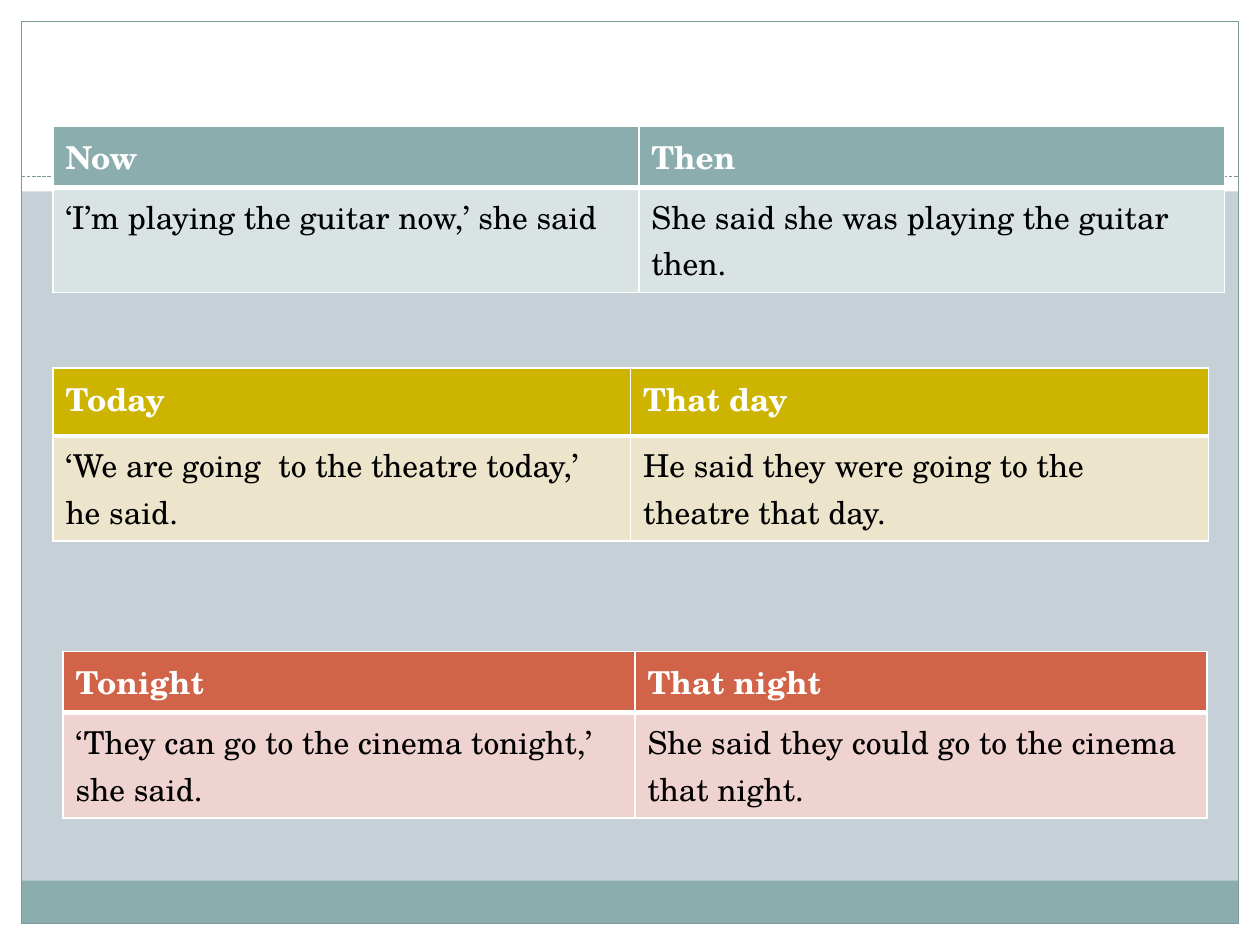
"""Build a slide of three tables on time words in reported speech."""
from dataclasses import dataclass

from lxml.etree import SubElement
from pptx import Presentation
from pptx.dml.color import RGBColor
from pptx.enum.dml import MSO_LINE
from pptx.enum.shapes import MSO_CONNECTOR, MSO_SHAPE
from pptx.oxml import parse_xml
from pptx.oxml.ns import nsdecls, qn
from pptx.util import Inches, Pt

WIDTH, HEIGHT = 10, 7.5
MARGIN = 0.17
HEADER_BOTTOM = 1.52
RULE_TOP = 1.4
FOOTER_HEIGHT = 0.34
FONT = "TeX Gyre Schola"
COLORS = {
    "page": "C5D1D7",
    "white": "FFFFFF",
    "black": "000000",
    "line": "7C999A",
    "teal": "8CADAE",
    "pale teal": "DAE3E3",
    "gold": "CCB400",
    "pale gold": "ECE5CC",
    "red": "D16349",
    "pale red": "EED3D0",
}


@dataclass(frozen=True)
class Band:
    left: float
    top: float
    width: float
    height: float
    fill: str | None
    line: str | None = None


@dataclass(frozen=True)
class SpeechTable:
    left: float
    top: float
    width: float
    rows: tuple[float, float]
    color: str
    texts: tuple[tuple[str, str], tuple[str, str]]


INNER_WIDTH = WIDTH - 2 * MARGIN
INNER_HEIGHT = HEIGHT - 2 * MARGIN
BANDS = (
    Band(0, HEIGHT - MARGIN, WIDTH, MARGIN, "white"),
    Band(0, 0, WIDTH, HEADER_BOTTOM, "white"),
    Band(0, 0, MARGIN, HEIGHT, "white"),
    Band(WIDTH - MARGIN, 0, MARGIN, HEIGHT, "white"),
    Band(MARGIN, HEIGHT - MARGIN - FOOTER_HEIGHT, INNER_WIDTH, FOOTER_HEIGHT, "teal"),
    Band(MARGIN, MARGIN, INNER_WIDTH, INNER_HEIGHT, None, "line"),
)
TABLES = (
    SpeechTable(0.42, 1, 9.3, (0.41, 0.7), "teal", (
        ("Now", "Then"),
        ("‘I’m playing the guitar now,’ she said",
         "She said she was playing the guitar then."),
    )),
    SpeechTable(0.42, 2.92, 9.17, (0.54, 0.7), "gold", (
        ("Today", "That day"),
        ("‘We are going  to the theatre today,’ he said.",
         "He said they were going to the theatre that day."),
    )),
    SpeechTable(0.5, 5.17, 9.08, (0.41, 0.7), "red", (
        ("Tonight", "That night"),
        ("‘They can go to the cinema tonight,’ she said.",
         "She said they could go to the cinema that night."),
    )),
)


def rgb(name: str) -> RGBColor:
    return RGBColor.from_string(COLORS[name])


def draw_band(page, band: Band) -> None:
    box = page.shapes.add_shape(
        MSO_SHAPE.RECTANGLE,
        *map(Inches, (band.left, band.top, band.width, band.height)),
    )
    box.shadow.inherit = False
    if band.fill:
        box.fill.solid()
        box.fill.fore_color.rgb = rgb(band.fill)
    else:
        box.fill.background()
    if band.line:
        box.line.color.rgb = rgb(band.line)
        box.line.width = Pt(0.75)
    else:
        box.line.fill.background()


def draw_rule(page) -> None:
    rule = page.shapes.add_connector(
        MSO_CONNECTOR.STRAIGHT,
        *map(Inches, (MARGIN, RULE_TOP, WIDTH - MARGIN, RULE_TOP)),
    )
    rule.line.color.rgb = rgb("line")
    rule.line.width = Pt(0.75)
    rule.line.dash_style = MSO_LINE.SQUARE_DOT
    SubElement(rule._element.spPr, qn("a:effectLst"))


def set_borders(cell, thick_side: str) -> None:
    properties = cell._tc.get_or_add_tcPr()
    for position, side in enumerate("LRTB"):
        width = Pt(3 if side == thick_side else 1)
        properties.insert(position, parse_xml(
            f'<a:ln{side} {nsdecls("a")} w="{width}"><a:solidFill>'
            f'<a:srgbClr val="{COLORS["white"]}"/></a:solidFill></a:ln{side}>'
        ))


def draw_table(page, item: SpeechTable) -> None:
    table = page.shapes.add_table(
        2, 2, *map(Inches, (item.left, item.top, item.width, sum(item.rows)))
    ).table
    for row_index, (height, texts) in enumerate(zip(item.rows, item.texts)):
        is_header = row_index == 0
        table.rows[row_index].height = Inches(height)
        for column_index, text in enumerate(texts):
            cell = table.cell(row_index, column_index)
            cell.fill.solid()
            cell.fill.fore_color.rgb = rgb(item.color if is_header else f"pale {item.color}")
            set_borders(cell, "B" if is_header else "T")
            cell.text_frame.text = text
            font = cell.text_frame.paragraphs[0].runs[0].font
            font.name = FONT
            font.size = Pt(18)
            font.bold = is_header
            font.color.rgb = rgb("white" if is_header else "black")


def main() -> None:
    deck = Presentation()
    deck.slide_width, deck.slide_height = Inches(WIDTH), Inches(HEIGHT)
    page = deck.slides.add_slide(deck.slide_layouts[6])
    page.background.fill.solid()
    page.background.fill.fore_color.rgb = rgb("page")
    for band in BANDS:
        draw_band(page, band)
    draw_rule(page)
    for item in TABLES:
        draw_table(page, item)
    deck.save("out.pptx")


if __name__ == "__main__":
    main()
